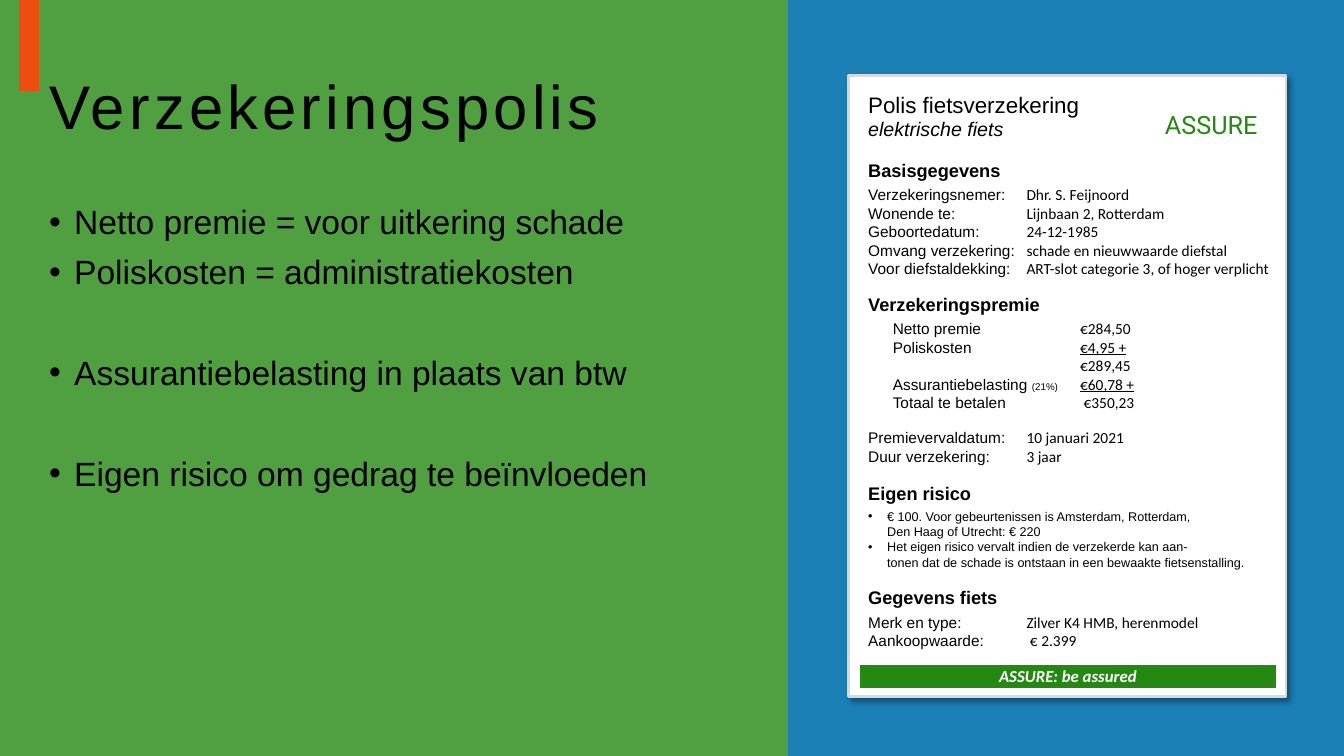
from copy import deepcopy

from lxml import etree
from pptx import Presentation
from pptx.dml.color import RGBColor
from pptx.enum.shapes import MSO_SHAPE
from pptx.enum.text import MSO_ANCHOR, MSO_AUTO_SIZE, PP_ALIGN
from pptx.oxml.ns import qn
from pptx.util import Cm, Pt

RECTANGLE = MSO_SHAPE.RECTANGLE
MIDDLE, CENTER = MSO_ANCHOR.MIDDLE, PP_ALIGN.CENTER
GROW = MSO_AUTO_SIZE.SHAPE_TO_FIT_TEXT
BLACK, WHITE, GREEN = "000000", "FFFFFF", "258812"
BLUE, ORANGE, GREY = "1A80B6", "ED4D0F", "D9D9D9"

TITLE = "Verzekeringspolis"
# text, points of space before
POINTS = [
    ("Netto premie = voor uitkering schade", 0),
    ("Poliskosten = administratiekosten", 10),
    ("Assurantiebelasting in plaats van btw", 46),
    ("Eigen risico om gedrag te beïnvloeden", 46),
]

# text, left, top, width, height, run style
POLICY_HEAD = [
    ("ASSURE", 29.11, 2.64, 3.33, 1.02, dict(size=18, font="Roboto", color=GREEN)),
    ("Polis fietsverzekering", 21.63, 2.18, 5.89, 0.94, dict(size=16)),
    ("elektrische fiets", 21.63, 2.82, 3.94, 0.86, dict(size=14, italic=True)),
]
# heading, top, width
HEADINGS = [
    ("Basisgegevens", 3.89, 3.89),
    ("Verzekeringspremie", 7.26, 4.9),
    ("Eigen risico", 12.04, 3.15),
    ("Gegevens fiets", 14.66, 3.81),
]
# top, width, height, rows of label and value
DETAILS = [
    (4.55, 10.82, 2.62, [
        ("Verzekeringsnemer:", "Dhr. S. Feijnoord"),
        ("Wonende te:", "Lijnbaan 2, Rotterdam"),
        ("Geboortedatum:", "24-12-1985"),
        ("Omvang verzekering:", "schade en nieuwwaarde diefstal"),
        ("Voor diefstaldekking:", "ART-slot categorie 3, of hoger verplicht"),
    ]),
    (10.67, 7.24, 1.19, [
        ("Premievervaldatum:", "10 januari 2021"),
        ("Duur verzekering:", "3 jaar"),
    ]),
    (15.32, 9.22, 1.19, [
        ("Merk en type:", "Zilver K4 HMB, herenmodel"),
        ("Aankoopwaarde:", " € 2.399"),
    ]),
]
# label, small note, amount, underlined
PREMIUM = [
    ("Netto premie", "", "€\t284,50", False),
    ("Poliskosten", "", "€\t4,95 +", True),
    ("", "", "€\t289,45", False),
    ("Assurantiebelasting ", "(21%)", "€\t60,78 +", True),
    ("Totaal te betalen", "", " €\t350,23", False),
]
OWN_RISK = [
    "€ 100. Voor gebeurtenissen is Amsterdam, Rotterdam,\n"
    "Den Haag of Utrecht: € 220",
    "Het eigen risico vervalt indien de verzekerde kan aan-\n"
    "tonen dat de schade is ontstaan in een bewaakte fietsenstalling.",
]
SLOGAN = "ASSURE: be assured"

LEFT = 21.63
VALUE_TABS = [(3.99, "l")]
AMOUNT_TABS = [(4.72, "l"), (5.72, "dec")]


def rgb(color):
    return RGBColor.from_string(color)


def add_panel(slide, left, top, width, height, fill, line=None):
    panel = slide.shapes.add_shape(RECTANGLE, Cm(left), Cm(top), Cm(width), Cm(height))
    panel.shadow.inherit = False
    panel.fill.solid()
    panel.fill.fore_color.rgb = rgb(fill)
    if line:
        panel.line.color.rgb = rgb(line)
        panel.line.width = Pt(2)
    else:
        panel.line.fill.background()
    return panel


def set_alpha(parent, percent):
    color = next(parent.iter(qn("a:srgbClr")))
    etree.SubElement(color, qn("a:alpha"), val=str(percent * 1000))


def add_shadow(shape):
    effects = shape._element.spPr.find(qn("a:effectLst"))
    shadow = etree.SubElement(effects, qn("a:outerShdw"), blurRad=str(Pt(4)),
                              dist=str(Pt(3)), dir="2700000", algn="tl", rotWithShape="0")
    etree.SubElement(shadow, qn("a:srgbClr"), val=BLACK)
    set_alpha(shadow, 40)


def add_frame(slide, left, top, width, height, wrap=False, grow=True):
    box = slide.shapes.add_textbox(Cm(left), Cm(top), Cm(width), Cm(height))
    frame = box.text_frame
    frame.word_wrap = wrap
    if grow:
        frame.auto_size = GROW
    return frame


def paragraphs(frame, items):
    """Pair each item with its own paragraph of the frame."""
    for index, item in enumerate(items):
        yield (frame.add_paragraph() if index else frame.paragraphs[0]), item


def add_run(paragraph, text, size, font="Arial", color=BLACK,
            bold=False, italic=False, underline=False):
    for index, line in enumerate(text.split("\n")):
        if index:
            paragraph.add_line_break()
            paragraph._p[-1].append(deepcopy(run._r.rPr))
        run = paragraph.add_run()
        run.text = line
        run.font.size, run.font.name = Pt(size), font
        run.font.bold, run.font.italic, run.font.underline = bold, italic, underline
        run.font.color.rgb = rgb(color)
    return run


def add_bullet(paragraph, indent):
    props = paragraph._p.get_or_add_pPr()
    props.set("marL", str(Cm(indent)))
    props.set("indent", str(-Cm(indent)))
    etree.SubElement(props, qn("a:buFont"), typeface="Arial")
    etree.SubElement(props, qn("a:buChar"), char="•")


def add_tabs(paragraph, stops):
    tabs = etree.SubElement(paragraph._p.get_or_add_pPr(), qn("a:tabLst"))
    for position, align in stops:
        etree.SubElement(tabs, qn("a:tab"), pos=str(Cm(position)), algn=align)


def add_explanation(slide):
    frame = add_frame(slide, 0.99, 0.99, 32.03, 3.56, wrap=True, grow=False)
    frame.vertical_anchor = MIDDLE
    frame.paragraphs[0].line_spacing = 0.9
    title = add_run(frame.paragraphs[0], TITLE, 44)
    title._r.rPr.set("spc", "300")

    frame = add_frame(slide, 0.99, 5.05, 18.85, 12.09, wrap=True, grow=False)
    for paragraph, (point, space) in paragraphs(frame, POINTS):
        add_bullet(paragraph, 0.63)
        paragraph.line_spacing = 0.9
        paragraph.space_before = Pt(space)
        add_run(paragraph, point, 24)


def add_policy(slide):
    add_shadow(add_panel(slide, 21.39, 1.9, 11.02, 15.65, WHITE, GREY))
    for text, left, top, width, height, style in POLICY_HEAD:
        add_run(add_frame(slide, left, top, width, height).paragraphs[0], text, **style)
    for heading, top, width in HEADINGS:
        frame = add_frame(slide, LEFT, top, width, 0.81)
        add_run(frame.paragraphs[0], heading, 13, bold=True)

    for top, width, height, rows in DETAILS:
        frame = add_frame(slide, LEFT, top, width, height, wrap=width > 10)
        for paragraph, (label, value) in paragraphs(frame, rows):
            add_tabs(paragraph, VALUE_TABS)
            add_run(paragraph, label + "\t", 11)
            add_run(paragraph, value, 11, "Calibri")

    frame = add_frame(slide, 22.25, 7.92, 10.19, 2.62, wrap=True)
    for paragraph, (label, note, amount, underlined) in paragraphs(frame, PREMIUM):
        add_tabs(paragraph, AMOUNT_TABS)
        if label:
            add_run(paragraph, label, 11)
        if note:
            add_run(paragraph, note, 7)
        add_run(paragraph, "\t", 11)
        add_run(paragraph, amount, 11, "Calibri", underline=underlined)

    frame = add_frame(slide, LEFT, 12.7, 10.08, 1.8)
    for paragraph, condition in paragraphs(frame, OWN_RISK):
        add_bullet(paragraph, 0.48)
        add_run(paragraph, condition, 9)

    footer = add_panel(slide, LEFT, 16.71, 10.57, 0.66, GREEN, WHITE).text_frame
    footer.vertical_anchor = MIDDLE
    footer.paragraphs[0].alignment = CENTER
    add_run(footer.paragraphs[0], SLOGAN, 12, "Calibri", WHITE, bold=True, italic=True)


def main():
    deck = Presentation()
    deck.slide_width, deck.slide_height = Cm(33.87), Cm(19.05)
    slide = deck.slides.add_slide(deck.slide_layouts[6])
    left_half = add_panel(slide, 0, 0, 19.86, 19.05, GREEN)
    set_alpha(left_half._element.spPr, 80)
    add_panel(slide, 19.86, 0, 14.01, 19.05, BLUE)
    add_panel(slide, 0.48, 0, 0.5, 2.29, ORANGE)
    add_explanation(slide)
    add_policy(slide)
    deck.save("out.pptx")


if __name__ == "__main__":
    main()
